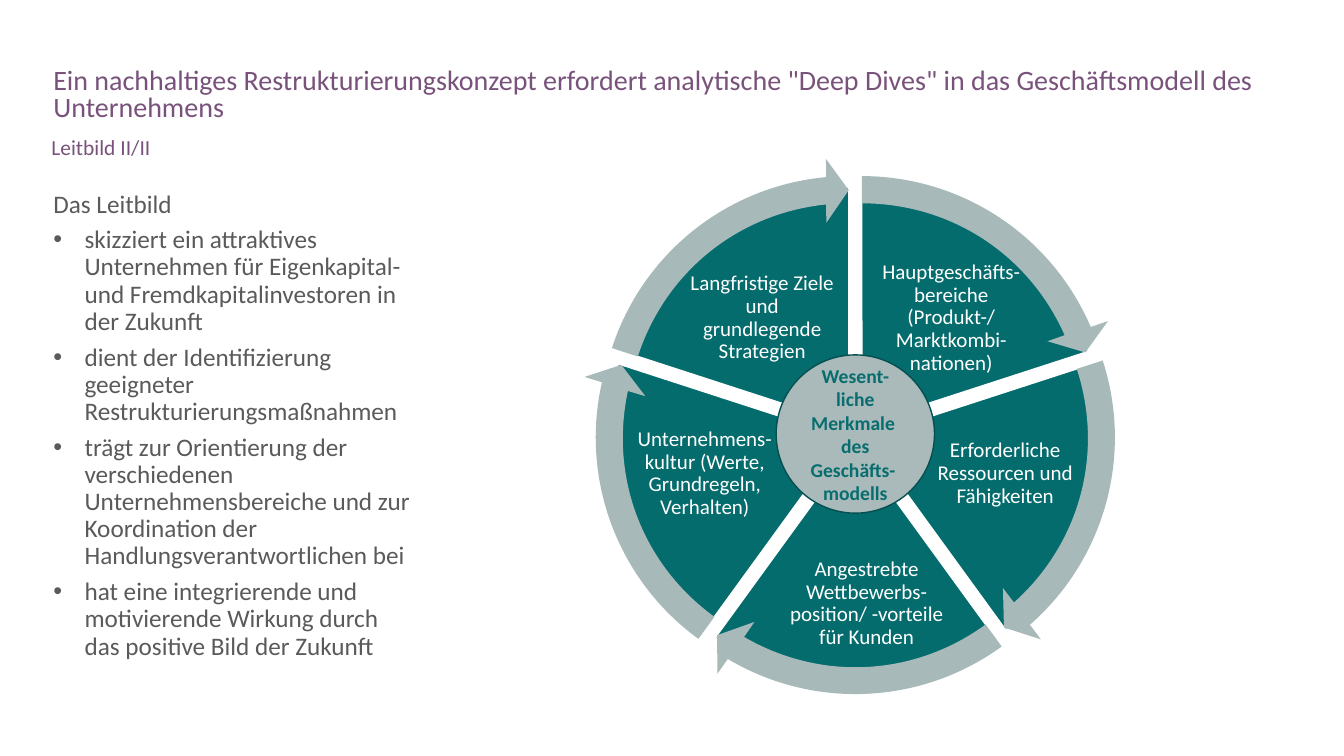
from dataclasses import dataclass
from math import atan, cos, degrees, hypot, radians, sin, tan

from lxml.etree import SubElement
from pptx import Presentation
from pptx.dml.color import RGBColor
from pptx.enum.shapes import MSO_SHAPE as Shape
from pptx.enum.text import MSO_ANCHOR as Anchor, PP_ALIGN as Align
from pptx.oxml.ns import qn
from pptx.util import Inches, Pt


@dataclass(frozen=True)
class Theme:
    font: str = "Calibri"
    teal: str = "056C6E"
    arrow: str = "A8B9B9"
    hub: str = "AABABA"
    hub_line: str = "054F50"
    hub_text: str = "086D6E"
    white: str = "FFFFFF"
    purple: str = "79527B"
    grey: str = "595A59"
    title_size: float = 20
    subtitle_size: float = 15.3
    body_size: float = 18
    label_size: float = 15
    hub_size: float = 14


theme = Theme()
presentation = Presentation()
presentation.slide_width = Inches(13.33)
presentation.slide_height = Inches(7.5)
slide = presentation.slides.add_slide(presentation.slide_layouts[6])
shapes = slide.shapes
column = presentation.slide_width / 100
row = presentation.slide_height / 100


def write(shape, lines, size, color, spacing, anchor=Anchor.TOP, align=Align.LEFT, bold=False):
    frame = shape.text_frame
    frame.word_wrap = True
    frame.vertical_anchor = anchor
    frame.text = "\n".join(lines)
    for paragraph in frame.paragraphs:
        paragraph.alignment = align
        paragraph.line_spacing = spacing
        for run in paragraph.runs:
            run.font.name = theme.font
            run.font.size = Pt(size)
            run.font.bold = bold
            run.font.color.rgb = RGBColor.from_string(color)
    return frame


def add_text_box(left, top, width, height):
    return shapes.add_textbox(
        round(left * column), round(top * row), round(width * column), round(height * row)
    )


wheel_x, wheel_y = 63.64 * column, 57.41 * row
sector_shift = 1.47 * row
sector_radius = 31.47 * row
hub_radius = 10.47 * row
ring_outer, ring_inner = 32.93 * row, 29.33 * row
head_outer, head_tip, head_inner = 35.33 * row, 31.07 * row, 26.93 * row

sectors = [
    ("Hauptgeschäfts-bereiche (Produkt-/ Marktkombi-nationen)", (64.89, 35.33, 11.78, 13.47)),
    ("Erforderliche Ressourcen und Fähigkeiten", (69.54, 55.2, 10.5, 14.93)),
    ("Angestrebte Wettbewerbs-position/ -vorteile für Kunden", (58.59, 71.6, 11.78, 16.53)),
    ("Unternehmens-kultur (Werte, Grundregeln, Verhalten)", (47.19, 55.2, 10.5, 14.93)),
    ("Langfristige Ziele und grundlegende Strategien", (51.01, 35.33, 11.4, 13.47)),
]
sweep = 360 // len(sectors)
arrows = []
for index, (label, label_box) in enumerate(sectors):
    start = 270 + index * sweep
    middle = radians(start + sweep / 2)
    center_x = wheel_x + sector_shift * cos(middle)
    center_y = wheel_y + sector_shift * sin(middle)
    arrows.append((start, center_x, center_y))

    sector = shapes.add_shape(
        Shape.PIE,
        round(center_x - sector_radius), round(center_y - sector_radius),
        round(2 * sector_radius), round(2 * sector_radius),
    )
    sector.adjustments[0] = round(start % 360 * 0.6, 1)
    sector.adjustments[1] = round((start + sweep) % 360 * 0.6, 1)
    sector.shadow.inherit = False
    sector.fill.solid()
    sector.fill.fore_color.rgb = RGBColor.from_string(theme.teal)
    sector.line.color.rgb = RGBColor.from_string(theme.white)
    sector.line.width = Pt(1)

    label_frame = write(add_text_box(*label_box), [label], theme.label_size, theme.white,
                        0.9, Anchor.MIDDLE, Align.CENTER)
    label_frame.margin_left = label_frame.margin_right = Inches(0.02)
    label_frame.margin_top = label_frame.margin_bottom = Inches(0.02)

outer_end, inner_end = 66.8, 66.1
handle = 4 / 3 * tan(radians(outer_end / 4))
stretch, lead = hypot(1, handle), degrees(atan(handle))
arrow_outline = [
    ("a:moveTo", [(ring_outer, 0)]),
    ("a:cubicBezTo", [(ring_outer * stretch, lead), (ring_outer * stretch, outer_end - lead),
                      (ring_outer, outer_end)]),
    ("a:lnTo", [(head_outer, 67.1)]),
    ("a:lnTo", [(head_tip, sweep)]),
    ("a:lnTo", [(head_inner, 65.7)]),
    ("a:lnTo", [(ring_inner, inner_end)]),
    ("a:cubicBezTo", [(ring_inner * stretch, inner_end - lead), (ring_inner * stretch, lead),
                      (ring_inner, 0)]),
    ("a:close", []),
]
for start, center_x, center_y in arrows:
    left, top = round(center_x - head_outer), round(center_y - head_outer)
    right, bottom = round(center_x + head_outer), round(center_y + head_outer)
    builder = shapes.build_freeform(left, top)
    builder.add_line_segments([(right, top), (right, bottom), (left, bottom)], close=True)
    arrow = builder.convert_to_shape()
    outline = arrow._element.find(".//" + qn("a:path"))
    for segment in list(outline):
        outline.remove(segment)
    for command, points in arrow_outline:
        segment = SubElement(outline, qn(command))
        for radius, angle in points:
            turn = radians(start + angle)
            SubElement(segment, qn("a:pt"), x=str(round(head_outer + radius * cos(turn))),
                       y=str(round(head_outer + radius * sin(turn))))
    arrow.shadow.inherit = False
    arrow.fill.solid()
    arrow.fill.fore_color.rgb = RGBColor.from_string(theme.arrow)
    arrow.line.fill.background()

body_lines = [
    "Das Leitbild",
    "skizziert ein attraktives Unternehmen für Eigenkapital- und Fremdkapitalinvestoren in der Zukunft",
    "dient der Identifizierung geeigneter Restrukturierungsmaßnahmen",
    "trägt zur Orientierung der verschiedenen Unternehmensbereiche und zur Koordination der "
    "Handlungsverantwortlichen bei",
    "hat eine integrierende und motivierende Wirkung durch das positive Bild der Zukunft",
]
body_frame = write(add_text_box(3.23, 23.87, 28.58, 64.93), body_lines, theme.body_size,
                   theme.grey, 0.9, Anchor.MIDDLE)
for paragraph in body_frame.paragraphs[1:]:
    paragraph.space_before = Pt(6)
    properties = paragraph._p.get_or_add_pPr()
    properties.set("marL", str(Inches(0.31)))
    properties.set("indent", str(-Inches(0.31)))
    bullet_color = SubElement(properties, qn("a:buClr"))
    SubElement(bullet_color, qn("a:srgbClr"), val=theme.grey)
    SubElement(properties, qn("a:buFont"), typeface="Arial")
    SubElement(properties, qn("a:buChar"), char="•")

title = 'Ein nachhaltiges Restrukturierungskonzept erfordert analytische "Deep Dives" in das Geschäftsmodell des Unternehmens'
write(add_text_box(3.23, 8.45, 94.07, 8.53), [title], theme.title_size, theme.purple, 0.8)
write(add_text_box(3.08, 18, 94.22, 3.73), ["Leitbild II/II"], theme.subtitle_size, theme.purple, 0.7)

hub = shapes.add_shape(
    Shape.OVAL, round(wheel_x - hub_radius), round(wheel_y - hub_radius),
    round(2 * hub_radius), round(2 * hub_radius),
)
hub.shadow.inherit = False
hub.fill.solid()
hub.fill.fore_color.rgb = RGBColor.from_string(theme.hub)
hub.line.color.rgb = RGBColor.from_string(theme.hub_line)
hub.line.width = Pt(1)
write(hub, ["Wesent-liche Merkmale \vdes Geschäfts- \vmodells"], theme.hub_size, theme.hub_text,
      1.0, Anchor.MIDDLE, Align.CENTER, True)

presentation.save("out.pptx")
